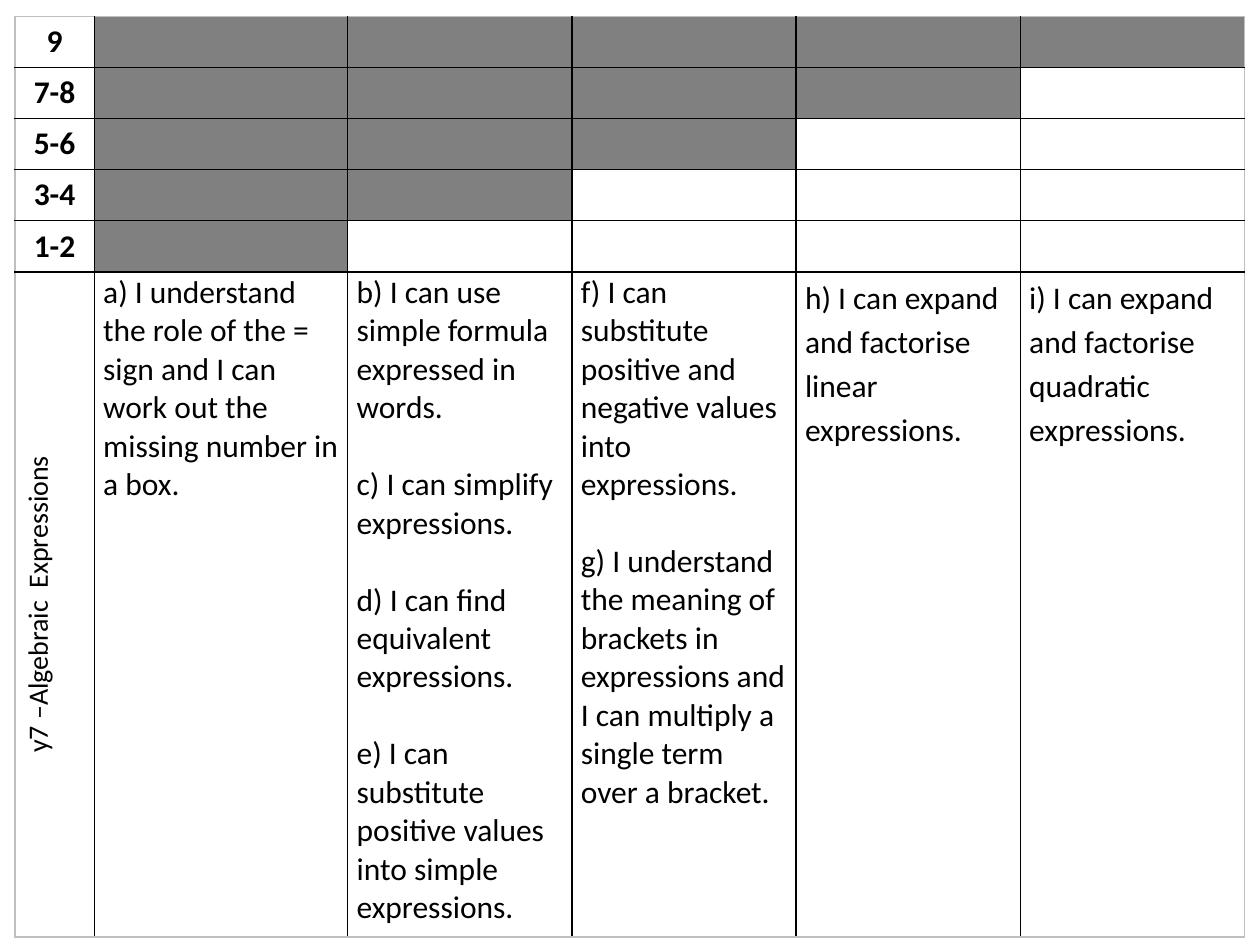
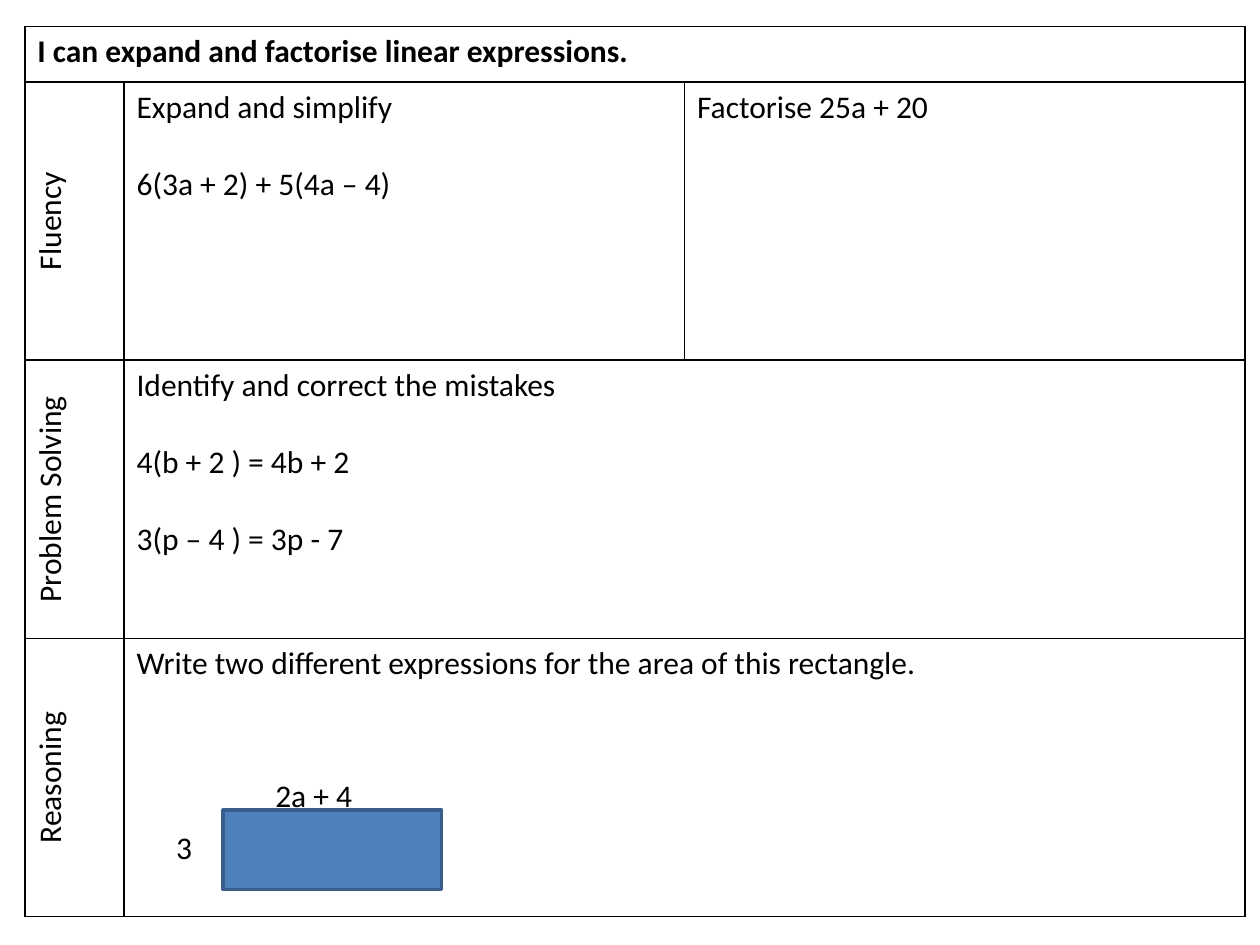
import pptx
import pptx.dml.color
import pptx.enum.shapes
import pptx.enum.text
import pptx.oxml
import pptx.oxml.ns
import pptx.util

Cm = pptx.util.Cm
Pt = pptx.util.Pt
CENTER = pptx.enum.text.PP_ALIGN.CENTER

COLOURS = {
    "text": "000000",
    "grid": "000000",
    "frame": "BFBFBF",
    "paper": "FFFFFF",
    "shaded": "808080",
    "rectangle": "4F81BD",
    "rectangle_line": "3A5F8C",
}
FONT = "Calibri"
BLANK_LINE = Pt(22)
STATEMENT_MARGINS = (0.18, 0.03, 0.18, 0)

GRADES = ["9", "7-8", "5-6", "3-4", "1-2"]
STATEMENTS = [
    ["a) I understand the role of the = sign and I can work out the missing number in a box."],
    [
        "b) I can use simple formula expressed in words.",
        "c) I can simplify expressions.",
        "d) I can find equivalent expressions.",
        "e) I can substitute positive values into simple expressions.",
    ],
    [
        "f) I can substitute positive and negative values into expressions.",
        "g) I understand the meaning of brackets in expressions and "
        "I can multiply a single term over a bracket.",
    ],
    ["h) I can expand and factorise linear expressions."],
    ["i) I can expand and factorise quadratic expressions."],
]
TASKS = [
    ("Fluency", [["Expand and simplify", "6(3a + 2) + 5(4a – 4)"], ["Factorise 25a + 20"]]),
    ("Problem Solving", [["Identify and correct the mistakes", "4(b + 2 ) = 4b + 2", "3(p – 4 ) = 3p - 7"]]),
    ("Reasoning", [["Write two different expressions for the area of this rectangle."]]),
]


def colour(name):
    return pptx.dml.color.RGBColor.from_string(COLOURS[name])


def write(text_frame, lines, size=18, bold=False, align=None, line_spacing=None):
    for index, line in enumerate(lines):
        paragraph = text_frame.paragraphs[0] if index == 0 else text_frame.add_paragraph()
        paragraph.text = line
        paragraph.alignment = align
        paragraph.line_spacing = line_spacing
        if index:
            paragraph.space_before = BLANK_LINE
        for run in paragraph.runs:
            run.font.name = FONT
            run.font.size = Pt(size)
            run.font.bold = bold
            run.font.color.rgb = colour("text")


def add_border(cell, side, name):
    namespace = pptx.oxml.ns.nsdecls("a")
    cell._tc.get_or_add_tcPr().append(pptx.oxml.parse_xml(
        f'<a:{side} {namespace} w="12700"><a:solidFill>'
        f'<a:srgbClr val="{COLOURS[name]}"/></a:solidFill></a:{side}>'
    ))


def add_grid(slide, left, top, widths, heights, frame):
    table = slide.shapes.add_table(
        len(heights), len(widths), Cm(left), Cm(top), Cm(sum(widths)), Cm(sum(heights))
    ).table
    table.first_row = table.horz_banding = False
    for column, width in zip(table.columns, widths):
        column.width = Cm(width)
    last_row, last_column = len(heights) - 1, len(widths) - 1
    for row_index, height in enumerate(heights):
        table.rows[row_index].height = Cm(height)
        for column_index in range(len(widths)):
            cell = table.cell(row_index, column_index)
            outer_sides = {
                "lnL": column_index == 0,
                "lnR": column_index == last_column,
                "lnT": row_index == 0,
                "lnB": row_index == last_row,
            }
            for side, is_outer in outer_sides.items():
                add_border(cell, side, frame if is_outer else "grid")
            fill_cell(cell, "paper")
    return table


def fill_cell(cell, name):
    cell.fill.solid()
    cell.fill.fore_color.rgb = colour(name)


def write_sideways(cell, label, size=18):
    cell._tc.get_or_add_tcPr().set("vert", "vert270")
    write(cell.text_frame, [label], size, align=CENTER)


def write_statements(cell, lines, line_spacing):
    cell.margin_left, cell.margin_top, cell.margin_right, cell.margin_bottom = map(Cm, STATEMENT_MARGINS)
    write(cell.text_frame, lines, line_spacing=line_spacing)


def add_label(slide, text, left, top, width):
    text_frame = slide.shapes.add_textbox(Cm(left), Cm(top), Cm(width), Cm(1.02)).text_frame
    text_frame.word_wrap = True
    write(text_frame, [text])


def add_rectangle(slide, left, top, width, height):
    shape = slide.shapes.add_shape(
        pptx.enum.shapes.MSO_SHAPE.RECTANGLE, Cm(left), Cm(top), Cm(width), Cm(height)
    )
    shape.shadow.inherit = False
    shape.fill.solid()
    shape.fill.fore_color.rgb = colour("rectangle")
    shape.line.color.rgb = colour("rectangle_line")
    shape.line.width = Pt(2)


def build_progress_slide(slide):
    grade_count = len(GRADES)
    table = add_grid(
        slide, 0.3, 0.33, [1.6, 5.11] + [4.52] * 4, [0.97] * grade_count + [13.41], "frame"
    )
    for row, grade in enumerate(GRADES):
        write(table.cell(row, 0).text_frame, [grade], bold=True, align=CENTER)
        for column in range(1, grade_count - row + 1):
            fill_cell(table.cell(row, column), "shaded")
    write_sideways(table.cell(grade_count, 0), "y7 –Algebraic  Expressions", 16)
    for column, lines in enumerate(STATEMENTS, start=1):
        write_statements(table.cell(grade_count, column), lines, 1.15 if column > 3 else None)


def build_task_slide(slide):
    table = add_grid(slide, 0.5, 0.53, [2, 11.3, 11.3], [1.12] + [5.61] * len(TASKS), "grid")
    table.cell(0, 0).merge(table.cell(0, 2))
    write(table.cell(0, 0).text_frame, ["I can expand and factorise linear expressions."], bold=True)
    for row, (skill, questions) in enumerate(TASKS, start=1):
        write_sideways(table.cell(row, 0), skill)
        if len(questions) == 1:
            table.cell(row, 1).merge(table.cell(row, 2))
        for column, lines in enumerate(questions, start=1):
            write(table.cell(row, column).text_frame, lines)
    add_rectangle(slide, 4.5, 16.33, 4.4, 1.6)
    add_label(slide, "2a + 4", 5.3, 15.52, 3.2)
    add_label(slide, "3", 3.3, 16.56, 1.2)


def main():
    presentation = pptx.Presentation()
    presentation.slide_width = Cm(25.4)
    presentation.slide_height = Cm(19.05)
    blank_layout = presentation.slide_layouts[6]
    for build_slide in (build_progress_slide, build_task_slide):
        build_slide(presentation.slides.add_slide(blank_layout))
    presentation.save("out.pptx")


if __name__ == "__main__":
    main()
